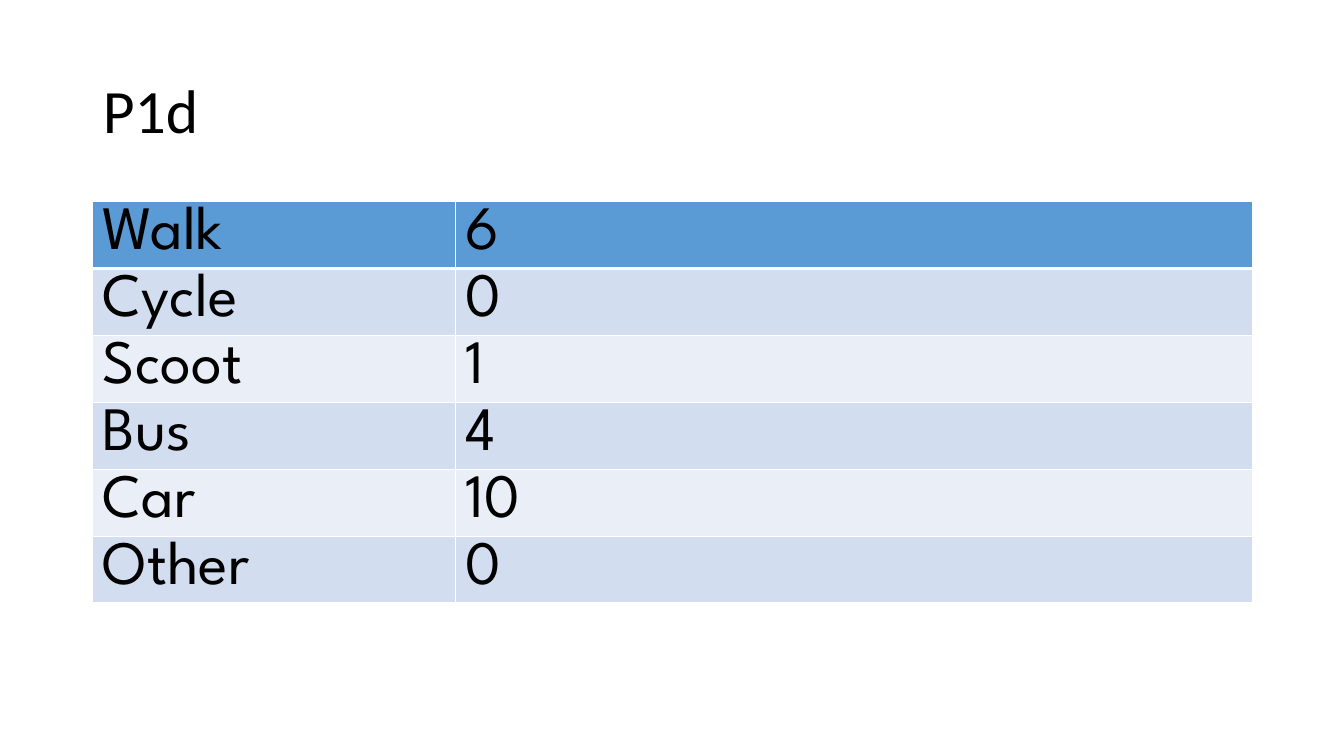
from lxml.etree import SubElement
from pptx import Presentation
from pptx.dml.color import RGBColor
from pptx.enum.text import MSO_ANCHOR, PP_ALIGN
from pptx.oxml.ns import qn
from pptx.util import Inches, Pt

COLORS = {"text": "000000", "header": "5B9BD5", "dark band": "D2DEEF",
          "light band": "EAEFF7", "border": "FFFFFF"}
TRAVEL_COUNTS = [("Walk", 6), ("Cycle", 0), ("Scoot", 1),
                 ("Bus", 4), ("Car", 10), ("Other", 0)]
LEFT, WIDTH = 0.92, 11.5
COLUMN_WIDTHS = (3.6, WIDTH - 3.6)
ROW_HEIGHT = 0.66


def write(frame, text, font, size=44, spacing=None):
    para = frame.paragraphs[0]
    para.alignment = PP_ALIGN.LEFT
    para.line_spacing = spacing
    span = para.add_run()
    span.text = text
    span.font.name = font
    span.font.size = Pt(size)
    span.font.bold = False
    span.font.color.rgb = RGBColor.from_string(COLORS["text"])


def add_borders(cell, bottom_width):
    properties = cell._tc.get_or_add_tcPr()
    for side in ("lnL", "lnR", "lnT", "lnB"):
        points = bottom_width if side == "lnB" else 1
        line = SubElement(properties, qn(f"a:{side}"), w=str(Pt(points)))
        fill = SubElement(line, qn("a:solidFill"))
        SubElement(fill, qn("a:srgbClr"), val=COLORS["border"])


deck = Presentation()
deck.slide_width, deck.slide_height = Inches(13.33), Inches(7.5)
page = deck.slides.add_slide(deck.slide_layouts[5])

# Title
title = page.shapes.title
title.left, title.top = Inches(LEFT), Inches(0.4)
title.width, title.height = Inches(WIDTH), Inches(1.45)
title.text_frame.vertical_anchor = MSO_ANCHOR.MIDDLE
write(title.text_frame, "P1d", "Calibri", spacing=0.9)

# Table of travel counts
table = page.shapes.add_table(
    len(TRAVEL_COUNTS), len(COLUMN_WIDTHS), Inches(LEFT), Inches(2),
    Inches(WIDTH), Inches(ROW_HEIGHT * len(TRAVEL_COUNTS))).table
for column, width in zip(table.columns, COLUMN_WIDTHS):
    column.width = Inches(width)

# Header row, then alternating bands
for row, entry in enumerate(TRAVEL_COUNTS):
    band = "header" if row == 0 else ("light band", "dark band")[row % 2]
    for column, value in enumerate(entry):
        cell = table.cell(row, column)
        add_borders(cell, bottom_width=3 if row == 0 else 1)
        cell.fill.solid()
        cell.fill.fore_color.rgb = RGBColor.from_string(COLORS[band])
        write(cell.text_frame, str(value), "League Spartan")

deck.save("out.pptx")
